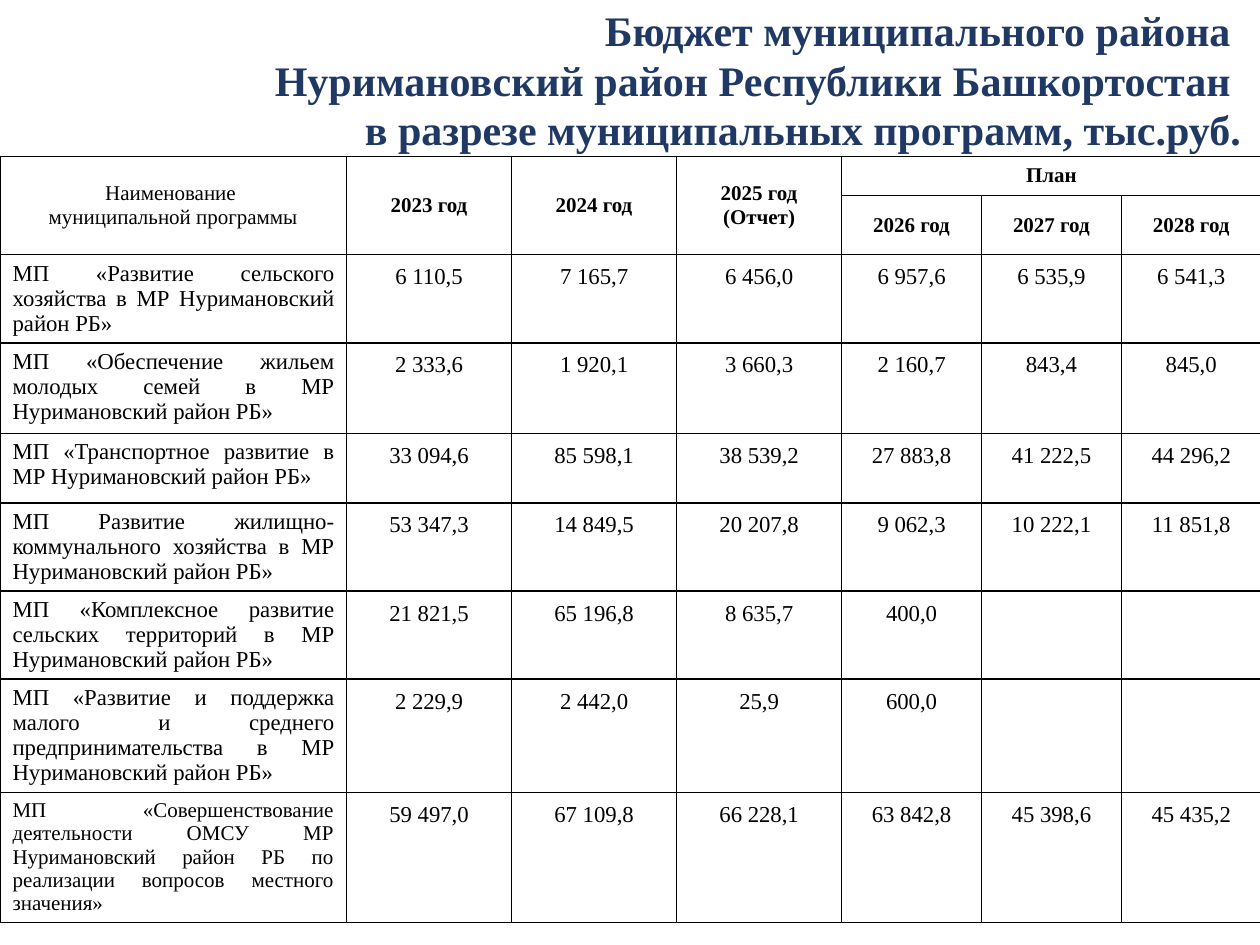
from dataclasses import dataclass

from lxml.etree import SubElement
from pptx import Presentation
from pptx.dml.color import RGBColor
from pptx.enum.text import MSO_ANCHOR as Anchor, MSO_AUTO_SIZE as AutoSize, PP_ALIGN as Align
from pptx.oxml.ns import qn
from pptx.util import Inches, Pt

FONT = "Times New Roman"
NAVY = RGBColor(0x20, 0x38, 0x64)
BLACK = RGBColor(0, 0, 0)
WHITE = RGBColor(0xFF, 0xFF, 0xFF)

COLUMNS = [2.75] + [1.31] * 3 + [1.11] * 3
ROWS = [0.31, 0.47, 0.7, 0.72, 0.55, 0.7, 0.7, 0.9, 1.03]
TITLE = [
    "Бюджет муниципального района ",
    "Нуримановский район Республики Башкортостан ",
    "в разрезе муниципальных программ, тыс.руб.",
]


@dataclass
class Heading:
    row: int
    col: int
    lines: list[str]
    rows: int = 1
    cols: int = 1
    bold: bool = True


@dataclass
class Program:
    name: str
    amounts: list[str]
    size: int = 13


HEADINGS = [
    Heading(0, 0, ["Наименование ", "муниципальной программы"], rows=2, bold=False),
    Heading(0, 1, ["2023 год"], rows=2),
    Heading(0, 2, ["2024 год"], rows=2),
    Heading(0, 3, ["2025 год (Отчет)"], rows=2),
    Heading(0, 4, ["План"], cols=3),
    Heading(1, 4, ["2026 год"]),
    Heading(1, 5, ["2027 год"]),
    Heading(1, 6, ["2028 год"]),
]
PROGRAMS = [
    Program("МП «Развитие сельского хозяйства в МР Нуримановский район РБ»",
            ["6 110,5", "7 165,7", "6 456,0", "6 957,6", "6 535,9", "6 541,3"]),
    Program("МП «Обеспечение жильем молодых семей в МР Нуримановский район РБ»",
            ["2 333,6", "1 920,1", "3 660,3", "2 160,7", "843,4", "845,0"]),
    Program("МП «Транспортное развитие в МР Нуримановский район РБ»",
            ["33 094,6", "85 598,1", "38 539,2", "27 883,8", "41 222,5", "44 296,2"]),
    Program("МП Развитие жилищно-коммунального хозяйства в МР Нуримановский район РБ»",
            ["53 347,3", "14 849,5", "20 207,8", "9 062,3", "10 222,1", "11 851,8"]),
    Program("МП «Комплексное развитие сельских территорий в МР Нуримановский район РБ»",
            ["21 821,5", "65 196,8", "8 635,7", "400,0"]),
    Program("МП «Развитие и поддержка малого и среднего предпринимательства "
            "в МР Нуримановский район РБ»",
            ["2 229,9", "2 442,0", "25,9", "600,0"]),
    Program("МП «Совершенствование деятельности ОМСУ МР Нуримановский район РБ "
            "по реализации вопросов местного значения»",
            ["59 497,0", "67 109,8", "66 228,1", "63 842,8", "45 398,6", "45 435,2"], size=12),
]


def add_run(p, text: str, size: float, color: RGBColor, bold: bool = False) -> None:
    r = p.add_run()
    r.text = text
    r.font.name = FONT
    r.font.size = Pt(size)
    r.font.bold = bold
    r.font.color.rgb = color


def write_cell(cell, lines: list[str], size: float, align: Align,
               bold: bool = False, spacing: float = 1.0) -> None:
    tf = cell.text_frame
    for i, line in enumerate(lines):
        p = tf.add_paragraph() if i else tf.paragraphs[0]
        p.alignment = align
        p.line_spacing = spacing
        add_run(p, line, size, BLACK, bold)


def style_cell(cell) -> None:
    tc_pr = cell._tc.get_or_add_tcPr()
    for side in ("lnL", "lnR", "lnT", "lnB"):
        ln = SubElement(tc_pr, qn(f"a:{side}"), w=str(Pt(1)))
        fill = SubElement(ln, qn("a:solidFill"))
        SubElement(fill, qn("a:srgbClr"), val=str(BLACK))
    cell.fill.solid()
    cell.fill.fore_color.rgb = WHITE


def add_title(s) -> None:
    sp = s.shapes.title
    sp.left, sp.top, sp.width, sp.height = map(Inches, (0, 0.21, 9.95, 0.87))
    tf = sp.text_frame
    tf.auto_size = AutoSize.NONE
    tf.vertical_anchor = Anchor.MIDDLE
    p = tf.paragraphs[0]
    p.alignment = Align.RIGHT
    p.line_spacing = 0.98
    for i, line in enumerate(TITLE):
        if i:
            p.add_line_break()
        add_run(p, line, 24, NAVY, bold=True)


def add_budget_table(s) -> None:
    frame = s.shapes.add_table(len(ROWS), len(COLUMNS), 0, Inches(1.24),
                               Inches(sum(COLUMNS)), Inches(sum(ROWS)))
    table = frame.table
    table.first_row = table.horz_banding = False
    for column, width in zip(table.columns, COLUMNS):
        column.width = Inches(width)
    for row, height in zip(table.rows, ROWS):
        row.height = Inches(height)
    for cell in table.iter_cells():
        style_cell(cell)

    # Two-level heading
    for h in HEADINGS:
        cell = table.cell(h.row, h.col)
        if h.rows > 1 or h.cols > 1:
            cell.merge(table.cell(h.row + h.rows - 1, h.col + h.cols - 1))
        cell.vertical_anchor = Anchor.MIDDLE
        write_cell(cell, h.lines, 12, Align.CENTER, h.bold)

    # Programs and their yearly amounts
    for row, program in enumerate(PROGRAMS, start=2):
        write_cell(table.cell(row, 0), [program.name], program.size, Align.JUSTIFY)
        for col, amount in enumerate(program.amounts, start=1):
            write_cell(table.cell(row, col), [amount], 13, Align.CENTER, spacing=1.15)


def main() -> None:
    prs = Presentation()
    prs.slide_width, prs.slide_height = Inches(10), Inches(7.5)
    s = prs.slides.add_slide(prs.slide_layouts.get_by_name("Title Only"))
    add_title(s)
    add_budget_table(s)
    prs.save("out.pptx")


if __name__ == "__main__":
    main()
